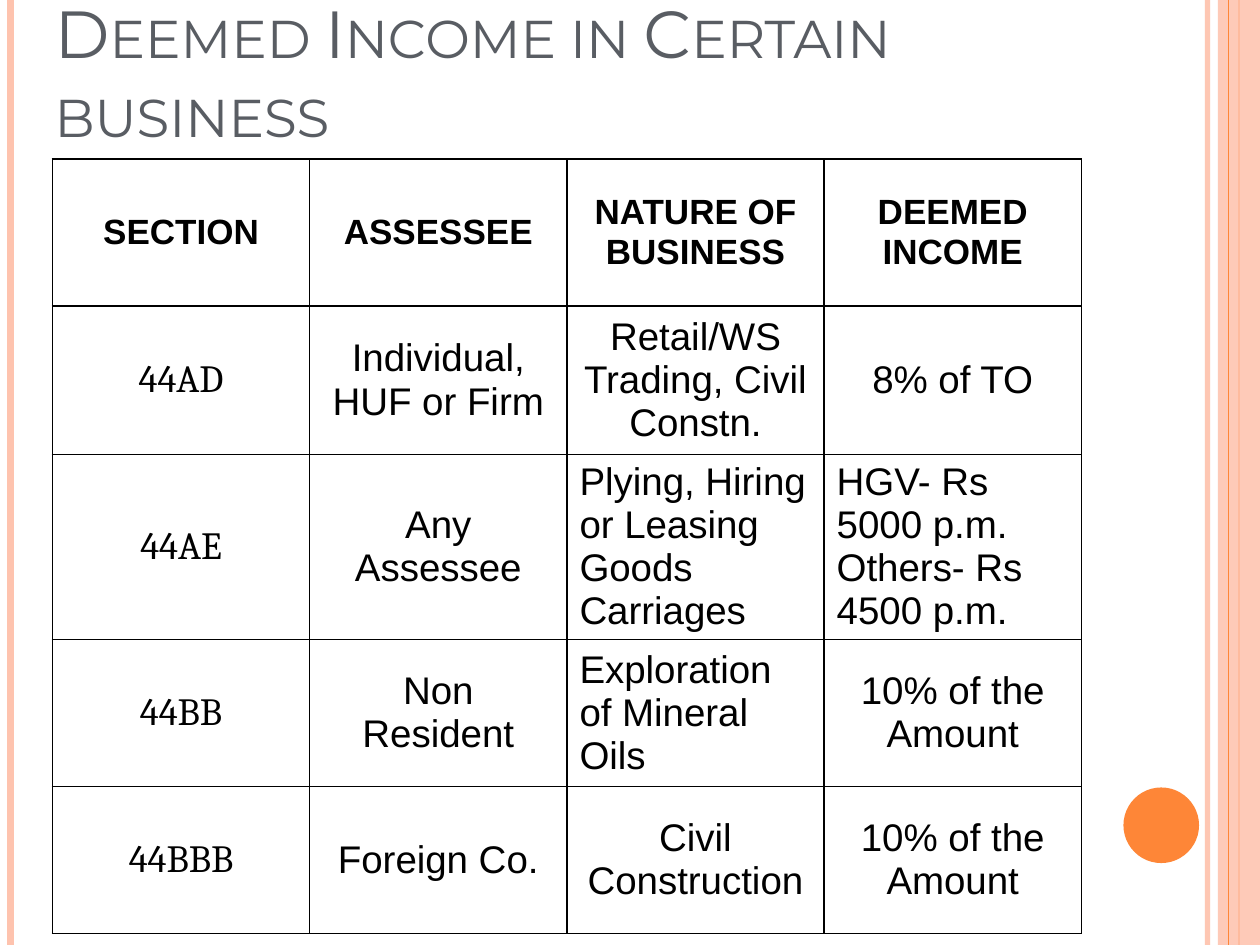
from lxml.etree import SubElement
from pptx import Presentation
from pptx.dml.color import RGBColor
from pptx.enum.shapes import MSO_CONNECTOR, MSO_SHAPE
from pptx.enum.text import MSO_ANCHOR, MSO_AUTO_SIZE, PP_ALIGN
from pptx.oxml.ns import qn
from pptx.util import Pt

COLORS = {"peach": "FEC3AE", "orange": "FE8637", "title": "595D63", "text": "000000"}
WIDTH, HEIGHT = 720, 540

TITLE = "Deemed Income in Certain business"
ROWS = [
    ["SECTION", "ASSESSEE", "NATURE OF BUSINESS", "DEEMED INCOME"],
    ["44AD", "Individual, HUF or Firm", "Retail/WS Trading, Civil Constn.", "8% of TO"],
    ["44AE", "Any Assessee", "Plying, Hiring or Leasing Goods Carriages",
     "HGV- Rs 5000 p.m.\nOthers- Rs 4500 p.m."],
    ["44BB", "Non Resident", "Exploration of Mineral Oils", "10% of the Amount"],
    ["44BBB", "Foreign Co.", "Civil Construction", "10% of the Amount"],
]
ROW_HEIGHTS = [84, 85, 101, 84, 84]
COLUMN_WIDTH = 147
LEFT_ALIGNED = {(2, 2), (2, 3), (3, 2)}
TOP_ANCHORED = {(2, 2), (2, 3)}

# x, line width, colour, opacity in percent
LEFT_RULES = [(690, 3, "peach", 93), (6, 4.5, "peach", 100), (708, 1.5, "orange", 100)]
BAND_RULE = (702, 0.75, "orange", 100)


def rgb(name):
    return RGBColor.from_string(COLORS[name])


def set_opacity(fill_parent, percent):
    color = fill_parent.find(".//" + qn("a:srgbClr"))
    SubElement(color, qn("a:alpha"), val=str(percent * 1000))


def add_rule(shapes, x, width, color, opacity):
    rule = shapes.add_connector(MSO_CONNECTOR.STRAIGHT, Pt(x), 0, Pt(x), Pt(HEIGHT))
    rule.line.width = Pt(width)
    rule.line.color.rgb = rgb(color)
    properties = rule._element.spPr
    if opacity < 100:
        set_opacity(properties, opacity)
    SubElement(properties, qn("a:effectLst"))


def add_filled(shapes, kind, left, top, width, height, color):
    shape = shapes.add_shape(kind, Pt(left), Pt(top), Pt(width), Pt(height))
    shape.shadow.inherit = False
    shape.fill.solid()
    shape.fill.fore_color.rgb = rgb(color)
    shape.line.fill.background()
    return shape


def add_borders(cell):
    properties = cell._tc.get_or_add_tcPr()
    for index, side in enumerate(("lnL", "lnR", "lnT", "lnB")):
        line = SubElement(properties, qn("a:" + side), w=str(Pt(1)))
        fill = SubElement(line, qn("a:solidFill"))
        SubElement(fill, qn("a:srgbClr"), val=COLORS["text"])
        properties.remove(line)
        properties.insert(index, line)


def fill_cell(cell, text, row, column):
    cell.text = text
    cell.fill.background()
    add_borders(cell)
    position = (row, column)
    cell.vertical_anchor = MSO_ANCHOR.TOP if position in TOP_ANCHORED else MSO_ANCHOR.MIDDLE
    for paragraph in cell.text_frame.paragraphs:
        paragraph.alignment = PP_ALIGN.LEFT if position in LEFT_ALIGNED else PP_ALIGN.CENTER
        font = paragraph.font
        font.name = "Cambria" if row and column == 0 else "Arial"
        font.size = Pt(22 if row else 20)
        font.bold = row == 0
        font.color.rgb = rgb("text")


presentation = Presentation()
presentation.slide_width, presentation.slide_height = Pt(WIDTH), Pt(HEIGHT)
slide = presentation.slides.add_slide(presentation.slide_layouts[5])
shapes = slide.shapes

# Side rules, right band and dot
for rule in LEFT_RULES:
    add_rule(shapes, *rule)
band = add_filled(shapes, MSO_SHAPE.RECTANGLE, 696, 0, 24, HEIGHT, "peach")
set_opacity(band._element.spPr, 87)
add_rule(shapes, *BAND_RULE)
add_filled(shapes, MSO_SHAPE.OVAL, 642, 450, 43.2, 43.2, "orange")

# Title in small capitals
title = shapes.title
title.left, title.top, title.width, title.height = Pt(24), Pt(0), Pt(588), Pt(90)
frame = title.text_frame
frame.text = TITLE
frame.word_wrap = True
frame.auto_size = MSO_AUTO_SIZE.NONE
frame.vertical_anchor = MSO_ANCHOR.BOTTOM
paragraph = frame.paragraphs[0]
paragraph.alignment = PP_ALIGN.LEFT
paragraph.font.name = "Montserrat"
paragraph.font.size = Pt(38)
paragraph.font.color.rgb = rgb("title")
paragraph.runs[0]._r.get_or_add_rPr().set("cap", "small")

# Table of sections
column_count = len(ROWS[0])
table = shapes.add_table(len(ROWS), column_count, Pt(30), Pt(90.75),
                         Pt(COLUMN_WIDTH * column_count), Pt(sum(ROW_HEIGHTS))).table
table.first_row = table.horz_banding = False
for column in table.columns:
    column.width = Pt(COLUMN_WIDTH)
for row, (height, texts) in enumerate(zip(ROW_HEIGHTS, ROWS)):
    table.rows[row].height = Pt(height)
    for column, text in enumerate(texts):
        fill_cell(table.cell(row, column), text, row, column)

presentation.save("out.pptx")
